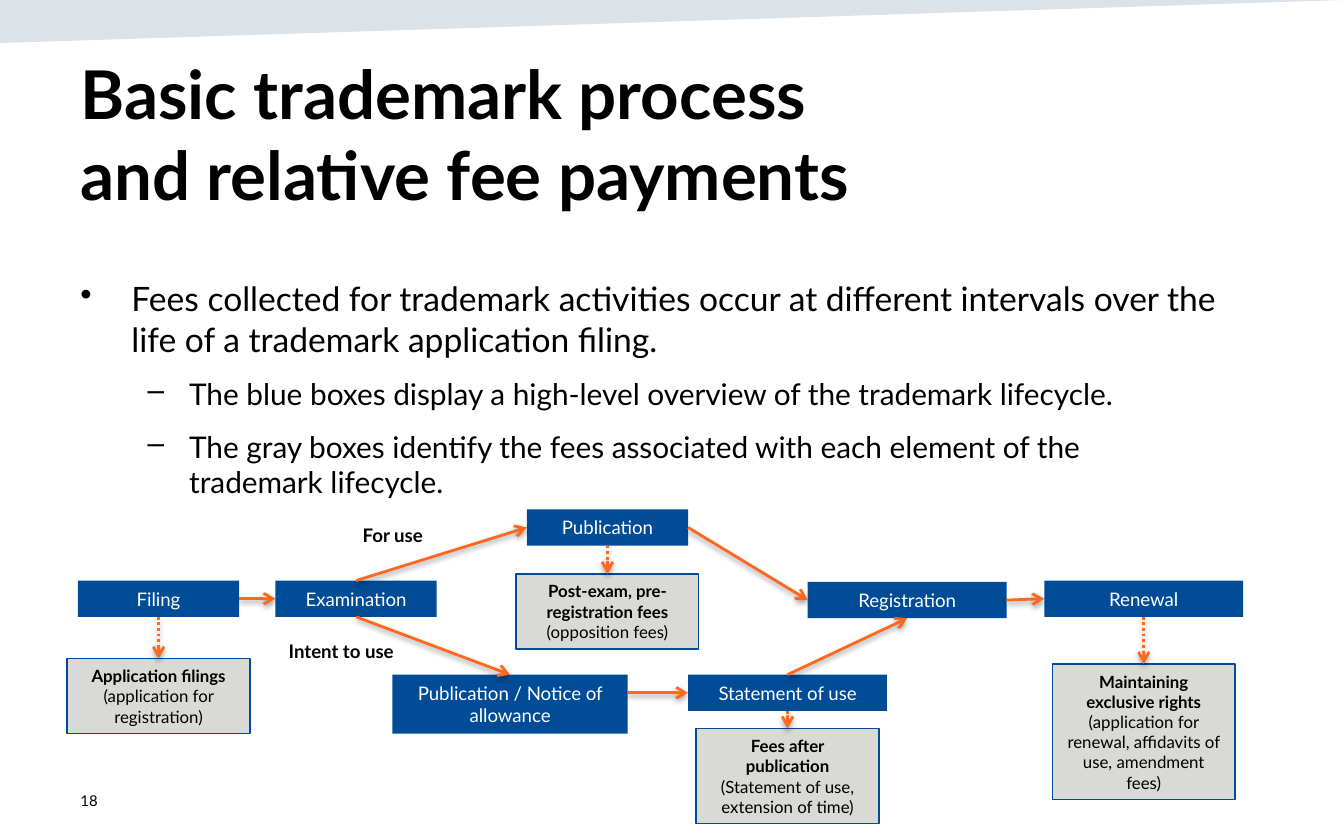
"""Build the slide on the trademark process and its fee payments."""
from dataclasses import dataclass
from typing import Any, NamedTuple

from pptx import Presentation
from pptx import util as u
from pptx.dml.color import RGBColor
from pptx.enum import dml, shapes, text
from pptx.oxml import ns, parse_xml

PX = u.Inches(1) // 100
TOP, LEFT, LOW, RIGHT = range(4)


@dataclass(frozen=True)
class Theme:
    font: str = "Lato"
    ink: str = "000000"
    pale: str = "FFFFFF"
    blue: str = "004C97"
    gray: str = "D9D9D6"
    flame: str = "FF671F"
    band: str = "164469"
    title: int = 36
    lead: int = 18
    point: int = 16
    step: int = 10
    fee: int = 9
    page: int = 8


THEME = Theme()


class Area(NamedTuple):
    left: int
    top: int
    width: int
    height: int


class Para(NamedTuple):
    words: str
    size: int
    color: str = THEME.ink
    bold: bool = False


class Step(NamedTuple):
    name: str
    area: Area


class Fee(NamedTuple):
    step: str
    area: Area
    head: str
    note: str


class Label(NamedTuple):
    area: Area
    para: Para
    format: dict[str, Any]


class Point(NamedTuple):
    para: Para
    level: int
    mark: str
    margin: int
    hang: int


class Link(NamedTuple):
    start: str
    out: int
    end: str
    into: int
    flat: bool = False


STEPS = [
    Step("Filing", Area(58, 432, 120, 27)),
    Step("Examination", Area(205, 432, 120, 27)),
    Step("Publication", Area(392, 379, 120, 27)),
    Step("Publication / Notice of allowance", Area(292, 502, 175, 44)),
    Step("Statement of use", Area(512, 502, 148, 27)),
    Step("Registration", Area(601, 433, 148, 27)),
    Step("Renewal", Area(777, 432, 148, 27)),
]
FEES = [
    Fee("Filing", Area(50, 490, 136, 56), "Application filings", "(application for registration)"),
    Fee("Publication", Area(384, 427, 136, 56), "Post-exam, pre-registration fees", "(opposition fees)"),
    Fee("Statement of use", Area(518, 542, 136, 71), "Fees after publication",
        "(Statement of use, extension of time)"),
    Fee("Renewal", Area(783, 494, 136, 101), "Maintaining exclusive rights",
        "(application for renewal, affidavits of use, amendment fees)"),
]
LINKS = [
    Link("Filing", RIGHT, "Examination", LEFT),
    Link("Examination", TOP, "Publication", LEFT),
    Link("Examination", LOW, "Publication / Notice of allowance", TOP),
    Link("Publication", RIGHT, "Registration", LEFT),
    Link("Publication / Notice of allowance", RIGHT, "Statement of use", LEFT, True),
    Link("Statement of use", TOP, "Registration", LOW),
    Link("Registration", RIGHT, "Renewal", LEFT),
]
LABELS = [
    Label(Area(50, 34, 900, 104), Para("Basic trademark process\vand relative fee payments",
                                       THEME.title, bold=True), {"word_wrap": True}),
    Label(Area(50, 579, 225, 33), Para("18", THEME.page),
          {"word_wrap": True, "vertical_anchor": text.MSO_ANCHOR.MIDDLE}),
    Label(Area(260, 385, 68, 27), Para("For use", THEME.step, bold=True), {"word_wrap": False}),
    Label(Area(205, 471, 104, 27), Para("Intent to use", THEME.step, bold=True), {"word_wrap": False}),
]
POINTS = [
    Point(Para("Fees collected for trademark activities occur at different intervals over the "
               "life of a trademark application filing.", THEME.lead), 0, "•", 38, 38),
    Point(Para("The blue boxes display a high-level overview of the trademark lifecycle.",
               THEME.point), 1, "–", 81, 31),
    Point(Para("The gray boxes identify the fees associated with each element of the\v"
               "trademark lifecycle.", THEME.point), 1, "–", 81, 31),
]


def apply(item: Any, format: dict[str, Any]) -> None:
    for key, value in format.items():
        setattr(item, key, value)


def scale(area: Area) -> list[int]:
    return [side * PX for side in area]


def node(tag: str, attrs: str = "", inner: str = "") -> Any:
    return parse_xml(f"<a:{tag} {ns.nsdecls('a')} {attrs}>{inner}</a:{tag}>")


def write(frame: Any, paras: list[Para], align: Any = None) -> None:
    for i, para in enumerate(paras):
        line = frame.add_paragraph() if i else frame.paragraphs[0]
        line.text = para.words
        line.alignment = align
        for run in line.runs:
            apply(run.font, {"name": THEME.font, "size": u.Pt(para.size), "bold": para.bold})
            run.font.color.rgb = RGBColor.from_string(para.color)


def paint(shape: Any, fill: str, edge: str | None = None) -> None:
    shape.shadow.inherit = False
    shape.fill.solid()
    shape.fill.fore_color.rgb = RGBColor.from_string(fill)
    if edge:
        shape.line.color.rgb = RGBColor.from_string(edge)
        shape.line.width = u.Pt(0.75)
    else:
        shape.line.fill.background()


def draw_band(slide: Any) -> None:
    form = slide.shapes.build_freeform(0, 0, scale=PX)
    form.add_line_segments([(0, 32), (1000, 0)])
    band = form.convert_to_shape()
    paint(band, THEME.band)
    band._element.xpath(".//a:srgbClr")[0].append(node("alpha", 'val="15000"'))


def draw_box(slide: Any, area: Area, paras: list[Para], fill: str, edge: str | None = None) -> Any:
    box = slide.shapes.add_shape(shapes.MSO_SHAPE.RECTANGLE, *scale(area))
    paint(box, fill, edge)
    apply(box.text_frame, {"word_wrap": True, "vertical_anchor": text.MSO_ANCHOR.MIDDLE})
    write(box.text_frame, paras, text.PP_ALIGN.CENTER)
    return box


def draw_label(slide: Any, label: Label) -> None:
    frame = slide.shapes.add_textbox(*scale(label.area)).text_frame
    apply(frame, label.format)
    write(frame, [label.para])


def draw_points(slide: Any, area: Area, points: list[Point]) -> None:
    frame = slide.shapes.add_textbox(*scale(area)).text_frame
    frame.word_wrap = True
    write(frame, [point.para for point in points])
    for line, point in zip(frame.paragraphs, points):
        apply(line, {"level": point.level, "space_before": u.Pt(9)})
        props = line._p.get_or_add_pPr()
        props.set("marL", str(point.margin * PX))
        props.set("indent", str(-point.hang * PX))
        props.append(node("buChar", f'char="{point.mark}"'))


def draw_link(slide: Any, start: Any, out: int, end: Any, into: int,
              flat: bool = False, dash: Any = None) -> None:
    link = slide.shapes.add_connector(shapes.MSO_CONNECTOR.STRAIGHT, 0, 0, 0, 0)
    link.end_connect(end, into)
    if flat:
        apply(link, {"begin_x": start.left + start.width, "begin_y": link.end_y})
    else:
        link.begin_connect(start, out)
    link.line.color.rgb = RGBColor.from_string(THEME.flame)
    apply(link.line, {"width": u.Pt(1.5), "dash_style": dash})
    link.line._get_or_add_ln().append(node("tailEnd", 'type="arrow"'))
    tint = f'<a:srgbClr val="{THEME.ink}"><a:alpha val="38000"/></a:srgbClr>'
    shade = (f'<a:outerShdw blurRad="{u.Pt(3.1)}" dist="{u.Pt(1.6)}" dir="5400000" '
             f'rotWithShape="0">{tint}</a:outerShdw>')
    link._element.spPr.append(node("effectLst", inner=shade))


def main() -> None:
    deck = Presentation()
    apply(deck, {"slide_width": 1000 * PX, "slide_height": 625 * PX})
    slide = deck.slides.add_slide(deck.slide_layouts[6])
    draw_band(slide)
    for label in LABELS:
        draw_label(slide, label)
    draw_points(slide, Area(50, 202, 900, 382), POINTS)
    boxes = {step.name: draw_box(slide, step.area, [Para(step.name, THEME.step, THEME.pale)], THEME.blue)
             for step in STEPS}
    for link in LINKS:
        draw_link(slide, boxes[link.start], link.out, boxes[link.end], link.into, link.flat)
    for fee in FEES:
        paras = [Para(fee.head, THEME.fee, bold=True), Para(fee.note, THEME.fee)]
        box = draw_box(slide, fee.area, paras, THEME.gray, THEME.blue)
        draw_link(slide, boxes[fee.step], LOW, box, TOP, dash=dml.MSO_LINE.ROUND_DOT)
    deck.save("out.pptx")


if __name__ == "__main__":
    main()
